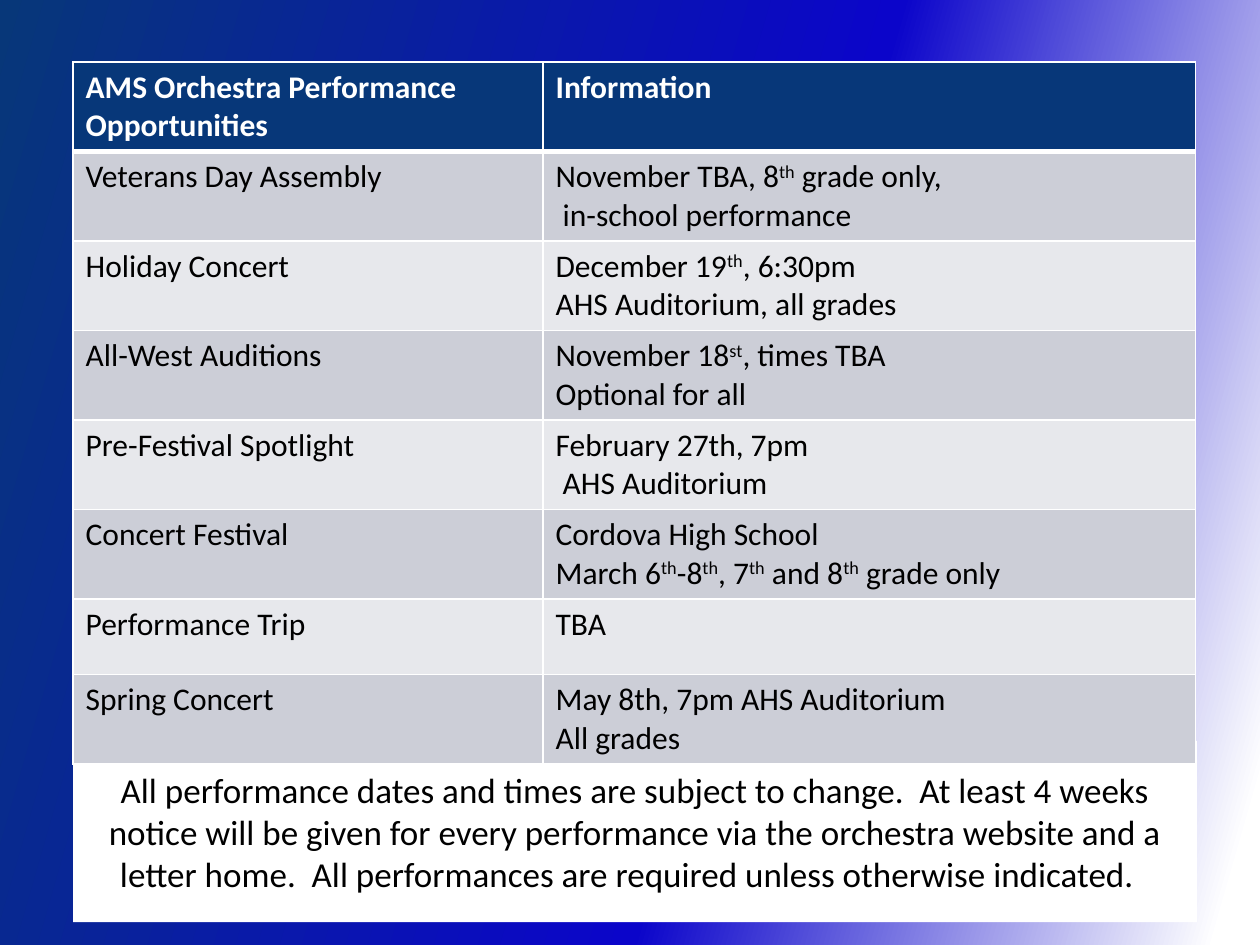
from copy import deepcopy
from dataclasses import dataclass

from pptx import Presentation
from pptx.dml.color import RGBColor as RGB
from pptx.enum.shapes import MSO_SHAPE as Shape
from pptx.enum.text import MSO_ANCHOR as Anchor, PP_ALIGN as Align
from pptx.oxml import parse_xml
from pptx.oxml.ns import nsdecls, qn
from pptx.util import Inches, Pt


@dataclass(frozen=True)
class Theme:
    font: str = "Calibri"
    navy: str = "073779"
    blue: str = "0B05CA"
    white: str = "FFFFFF"
    black: str = "000000"
    bands: tuple = ("CCCED7", "E7E8EC")
    table_size: int = 18
    note_size: int = 20
    border: int = 1
    header_border: int = 3


THEME = Theme()
LEFT, WIDTH = 0.58, 8.92
COLUMNS = (3.73, 5.18)
ROW_HEIGHTS = (0.6, 0.6, 0.67, 0.67, 0.67, 0.67, 0.6, 0.67)
SUPERSCRIPT_MARK = "^"
ROWS = (
    ("AMS Orchestra Performance Opportunities", "Information"),
    ("Veterans Day Assembly",
     "November TBA, 8^th^ grade only,\n in-school performance"),
    ("Holiday Concert",
     "December 19^th^, 6:30pm\nAHS Auditorium, all grades"),
    ("All-West Auditions", "November 18^st^, times TBA\nOptional for all"),
    ("Pre-Festival Spotlight", "February 27th, 7pm\n AHS Auditorium"),
    ("Concert Festival",
     "Cordova High School\nMarch 6^th^-8^th^, 7^th^ and 8^th^ grade only"),
    ("Performance Trip", "TBA"),
    ("Spring Concert", "May 8th, 7pm AHS Auditorium\nAll grades"),
)
NOTE = (
    "All performance dates and times are subject to change.  "
    "At least 4 weeks notice will be given for every performance "
    "via the orchestra website and a letter home.  "
    "All performances are required unless otherwise indicated.  "
)


def set_background(s):
    stops = ((0, THEME.navy), (0.59, THEME.blue),
             (0.97, THEME.white), (0.98, THEME.white))
    fill = s.background.fill
    fill.gradient()
    fill.gradient_angle = 360 - 16
    gs_list = s.element.find(".//" + qn("a:gsLst"))
    while len(gs_list) < len(stops):
        gs_list.append(deepcopy(gs_list[0]))
    for stop, (position, color) in zip(fill.gradient_stops, stops):
        stop.position = position
        stop.color.rgb = RGB.from_string(color)


def format_run(r, size, color, bold=False):
    r.font.name = THEME.font
    r.font.size = Pt(size)
    r.font.bold = bold
    r.font.color.rgb = RGB.from_string(color)


def add_note(s):
    sp = s.shapes.add_shape(Shape.RECTANGLE, Inches(LEFT), Inches(5.88),
                            Inches(WIDTH), Inches(1.44))
    sp.shadow.inherit = False
    sp.fill.solid()
    sp.fill.fore_color.rgb = RGB.from_string(THEME.white)
    sp.line.fill.background()
    tf = sp.text_frame
    tf.word_wrap = True
    tf.vertical_anchor = Anchor.MIDDLE
    tf.text = NOTE
    p = tf.paragraphs[0]
    p.alignment = Align.CENTER
    format_run(p.runs[0], THEME.note_size, THEME.black)


def set_borders(cell, bottom):
    tc_pr = cell._tc.get_or_add_tcPr()
    widths = dict.fromkeys(("lnL", "lnR", "lnT"), THEME.border)
    for index, (tag, width) in enumerate({**widths, "lnB": bottom}.items()):
        tc_pr.insert(index, parse_xml(
            f'<a:{tag} {nsdecls("a")} w="{Pt(width)}"><a:solidFill>'
            f'<a:srgbClr val="{THEME.white}"/></a:solidFill></a:{tag}>'))


def fill_paragraph(p, text, color, bold):
    for index, part in enumerate(text.split(SUPERSCRIPT_MARK)):
        r = p.add_run()
        r.text = part
        format_run(r, THEME.table_size, color, bold)
        if index % 2:
            r.font._element.set("baseline", "30000")


def fill_cell(cell, text, row):
    header = row == 0
    color = THEME.white if header else THEME.black
    background = THEME.navy if header else THEME.bands[(row - 1) % 2]
    cell.fill.solid()
    cell.fill.fore_color.rgb = RGB.from_string(background)
    set_borders(cell, THEME.header_border if header else THEME.border)
    tf = cell.text_frame
    for index, line in enumerate(text.split("\n")):
        p = tf.add_paragraph() if index else tf.paragraphs[0]
        fill_paragraph(p, line, color, header)


def add_schedule(s):
    table = s.shapes.add_table(len(ROWS), len(COLUMNS), Inches(LEFT),
                               Inches(0.49), Inches(WIDTH),
                               Inches(sum(ROW_HEIGHTS))).table
    for column, width in zip(table.columns, COLUMNS):
        column.width = Inches(width)
    for row, height in zip(table.rows, ROW_HEIGHTS):
        row.height = Inches(height)
    for i, texts in enumerate(ROWS):
        for j, text in enumerate(texts):
            fill_cell(table.cell(i, j), text, i)


def main():
    prs = Presentation()
    prs.slide_width, prs.slide_height = Inches(10), Inches(7.5)
    s = prs.slides.add_slide(prs.slide_layouts[6])
    set_background(s)
    add_note(s)
    add_schedule(s)
    prs.save("out.pptx")


if __name__ == "__main__":
    main()
